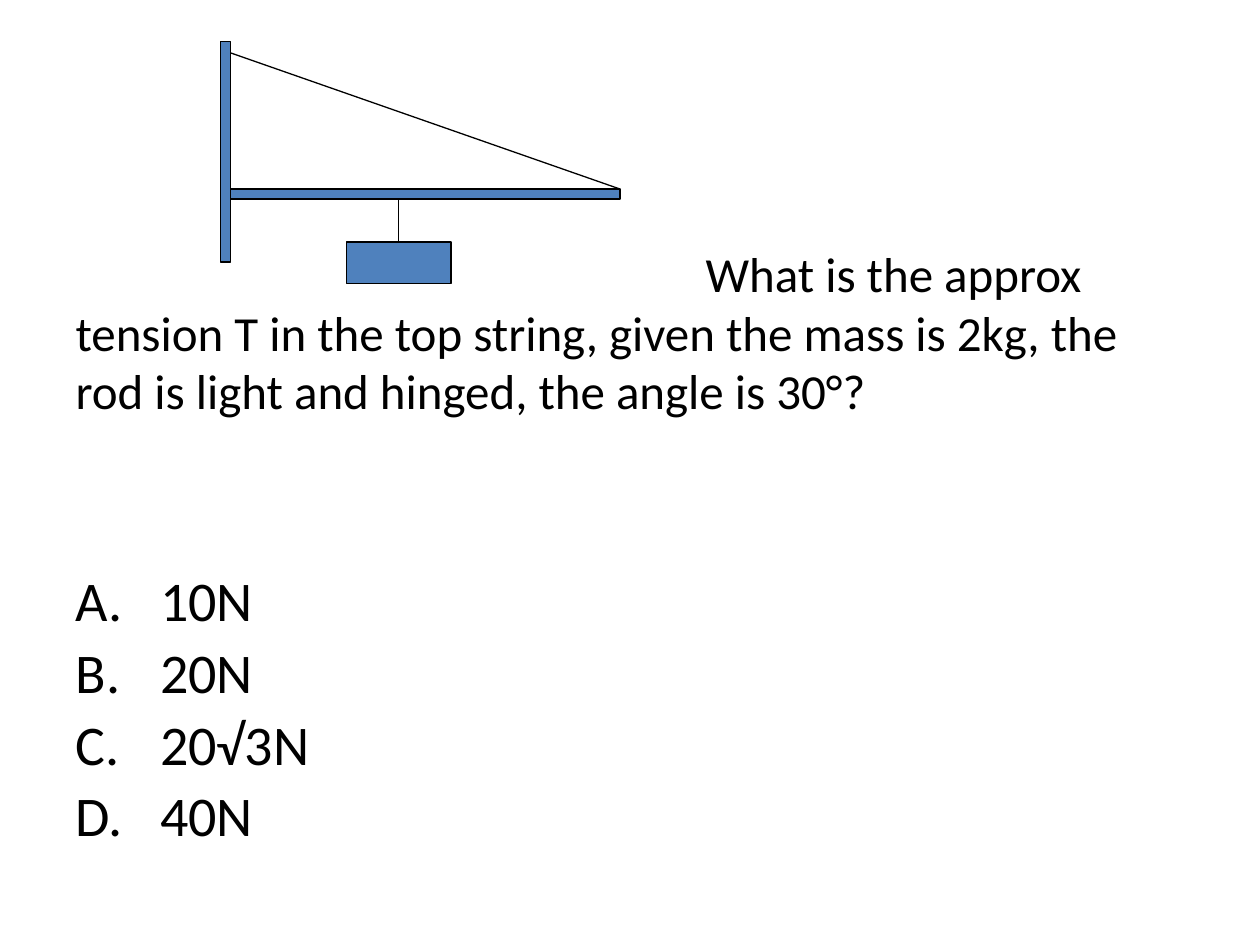
from lxml import etree
from pptx import Presentation
from pptx.dml.color import RGBColor
from pptx.enum.shapes import MSO_CONNECTOR, MSO_SHAPE
from pptx.enum.text import MSO_ANCHOR, MSO_AUTO_SIZE, PP_ALIGN
from pptx.oxml.ns import qn
from pptx.util import Inches, Pt

BLACK = RGBColor(0x00, 0x00, 0x00)
BLUE = RGBColor(0x4F, 0x81, 0xBD)
FONT = "Calibri"
STRAIGHT = MSO_CONNECTOR.STRAIGHT
RECTANGLE = MSO_SHAPE.RECTANGLE
TOP = MSO_ANCHOR.TOP
LEFT = PP_ALIGN.LEFT
NO_AUTOFIT = MSO_AUTO_SIZE.NONE

QUESTION = ("What is the approx tension T in the top string, given the mass is 2kg, "
            "the rod is light and hinged, the angle is 30°?")
ANSWERS = ["10N", "20N", "20√3N", "40N"]


def write_text(paragraph, text, size, left_margin=0, first_indent=0, line_spacing=None):
    run = paragraph.add_run()
    run.text = text
    run.font.name = FONT
    run.font.size = Pt(size)
    run.font.color.rgb = BLACK
    paragraph.alignment = LEFT
    if line_spacing:
        paragraph.line_spacing = line_spacing
    properties = paragraph._p.get_or_add_pPr()
    properties.set("marL", str(Inches(left_margin)))
    properties.set("indent", str(Inches(first_indent)))
    return properties


def place_frame(placeholder, left, top, width, height):
    placeholder.left, placeholder.top = Inches(left), Inches(top)
    placeholder.width, placeholder.height = Inches(width), Inches(height)
    frame = placeholder.text_frame
    frame.word_wrap = True
    frame.auto_size = NO_AUTOFIT
    frame.vertical_anchor = TOP
    return frame


def add_question(placeholder, left, top, width, height):
    frame = place_frame(placeholder, left, top, width, height)
    # The first line starts to the right of the diagram
    frame.margin_top = Inches(1.68)
    write_text(frame.paragraphs[0], QUESTION, 28, first_indent=5)


def add_answers(placeholder, left, top, width, height):
    frame = place_frame(placeholder, left, top, width, height)
    for index, answer in enumerate(ANSWERS):
        paragraph = frame.add_paragraph() if index else frame.paragraphs[0]
        properties = write_text(paragraph, answer, 32, left_margin=0.67,
                                first_indent=-0.67, line_spacing=0.9)
        etree.SubElement(properties, qn("a:buFont"), typeface=FONT)
        etree.SubElement(properties, qn("a:buAutoNum"), type="alphaUcPeriod")


def add_bar(slide, left, top, width, height):
    bar = slide.shapes.add_shape(RECTANGLE, Inches(left), Inches(top),
                                 Inches(width), Inches(height))
    bar.shadow.inherit = False
    bar.fill.solid()
    bar.fill.fore_color.rgb = BLUE
    bar.line.color.rgb = BLACK
    bar.line.width = Pt(0.75)
    return bar


def add_string(slide, start_x, start_y, end_x, end_y):
    string = slide.shapes.add_connector(STRAIGHT, Inches(start_x), Inches(start_y),
                                        Inches(end_x), Inches(end_y))
    string.line.color.rgb = BLACK
    string.line.width = Pt(0.75)
    etree.SubElement(string._element.spPr, qn("a:effectLst"))
    return string


def add_diagram(slide, left, top, width, height):
    thickness = 0.08
    rod_left, rod_top = left + thickness, top + 1.17
    mass_width, mass_height = 0.83, 0.33
    mass_left, mass_top = left + 1, top + height - mass_height
    mass_center = mass_left + mass_width / 2

    # Wall and hinged rod
    add_bar(slide, left, top, thickness, 1.75)
    add_bar(slide, rod_left, rod_top, width - thickness, thickness)
    # Top string, then the mass on its own string
    add_string(slide, rod_left, top + 0.09, left + width, rod_top)
    hanging_string = add_string(slide, mass_center, rod_top + thickness,
                                mass_center, mass_top)
    mass = add_bar(slide, mass_left, mass_top, mass_width, mass_height)
    hanging_string.end_connect(mass, 0)


def main():
    presentation = Presentation()
    presentation.slide_width = Inches(10)
    presentation.slide_height = Inches(7.5)
    slide = presentation.slides.add_slide(presentation.slide_layouts[1])
    add_question(slide.shapes.title, 0.5, 0.25, 9, 3.83)
    add_answers(slide.placeholders[1], 0.5, 4.5, 9, 2.5)
    add_diagram(slide, 1.75, 0.33, 3.17, 1.92)
    presentation.save("out.pptx")


if __name__ == "__main__":
    main()
